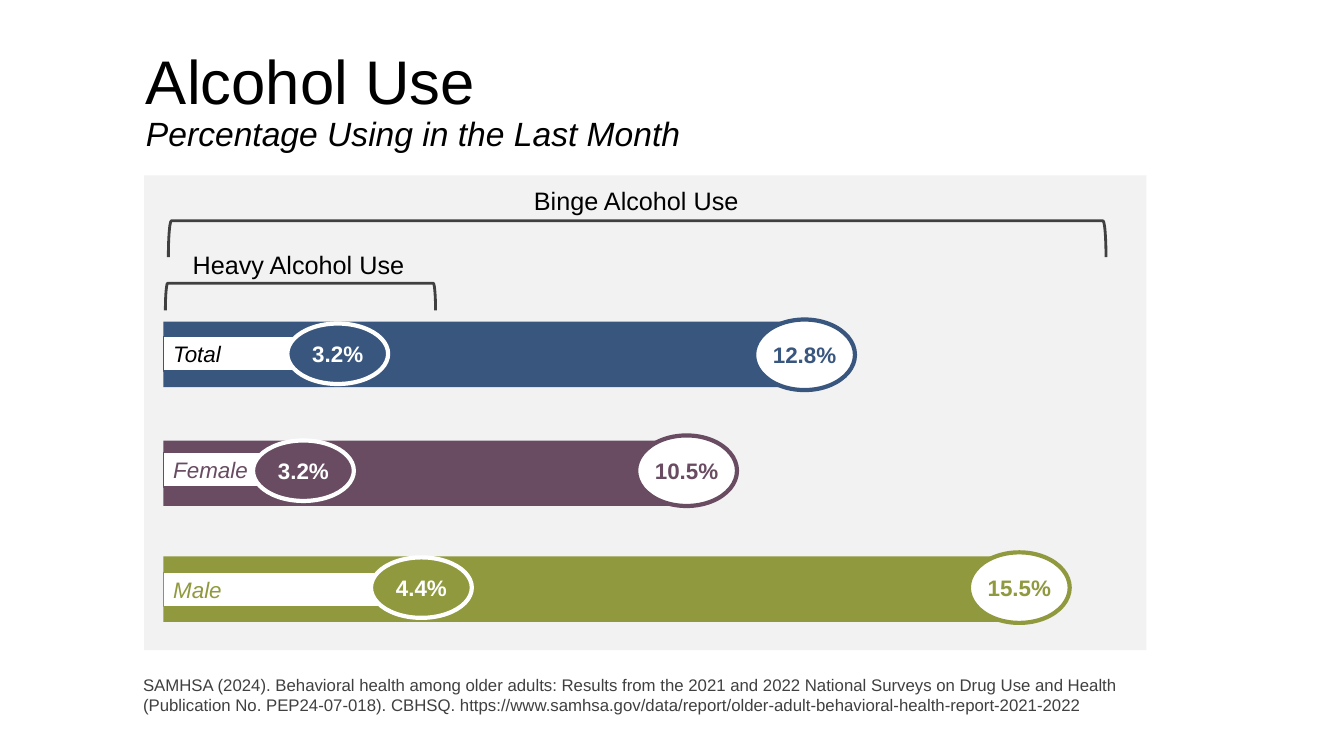
from pptx import Presentation
from pptx import util as u
from pptx.dml.color import RGBColor
from pptx.enum import shapes, text

COLORS = {
    "black": "000000", "white": "FFFFFF", "panel": "F2F2F2", "gray": "404040",
    "blue": "39567E", "plum": "694C62", "olive": "90993E",
}
FONT = "Arial"
LEFT = 1.62  # shared left edge of all bars

# name, color, label color, bar (top, width), label (top, width),
# heavy use (left, top, value), binge use (left, top, value)
GROUPS = [
    ("Total", "blue", "black", (3.19, 6.33), (3.34, 1.33),
     (2.85, 3.21, "3.2%"), (7.48, 3.17, "12.8%")),
    ("Female", "plum", "plum", (4.37, 5.2), (4.49, 1.33),
     (2.51, 4.37, "3.2%"), (6.31, 4.32, "10.5%")),
    ("Male", "olive", "olive", (5.52, 8.31), (5.68, 2.23),
     (3.68, 5.53, "4.4%"), (9.61, 5.48, "15.5%")),
]


def rgb(name):
    return RGBColor.from_string(COLORS[name])


def add_run(paragraph, words, size, color, bold=False, italic=False):
    run = paragraph.add_run()
    run.text = words
    font = run.font
    font.name, font.size = FONT, u.Pt(size)
    font.bold, font.italic = bold, italic
    font.color.rgb = rgb(color)


def add_shape(slide, kind, box, fill=None, line=None, weight=1):
    shape = slide.shapes.add_shape(kind, *map(u.Inches, box))
    shape.shadow.inherit = False
    if fill:
        shape.fill.solid()
        shape.fill.fore_color.rgb = rgb(fill)
    else:
        shape.fill.background()
    if line:
        shape.line.color.rgb = rgb(line)
        shape.line.width = u.Pt(weight)
    else:
        shape.line.fill.background()
    return shape


def add_text_box(slide, box, align=text.PP_ALIGN.LEFT, anchor=text.MSO_ANCHOR.TOP):
    frame = slide.shapes.add_textbox(*map(u.Inches, box)).text_frame
    frame.word_wrap = True
    frame.vertical_anchor = anchor
    paragraph = frame.paragraphs[0]
    paragraph.alignment = align
    return paragraph


def add_bar_label(slide, name, box, line, color):
    shape = add_shape(slide, shapes.MSO_SHAPE.RECTANGLE, box, "white", line)
    shape.text_frame.vertical_anchor = text.MSO_ANCHOR.MIDDLE
    paragraph = shape.text_frame.paragraphs[0]
    paragraph.alignment = text.PP_ALIGN.LEFT
    add_run(paragraph, name, 16, color, italic=True)


def add_value_oval(slide, left, top, height, value, fill, accent):
    shape = add_shape(slide, shapes.MSO_SHAPE.OVAL, (left, top, 1, height),
                      fill, accent, 3)
    frame = shape.text_frame
    frame.margin_left = frame.margin_right = 0
    frame.vertical_anchor = text.MSO_ANCHOR.MIDDLE
    paragraph = frame.paragraphs[0]
    paragraph.alignment = text.PP_ALIGN.CENTER
    add_run(paragraph, value, 16, accent, bold=True)


def add_bracket(slide, left, top, width, height):
    """Draw a bracket that opens downward over the given area."""
    box = (left + (width - height) / 2, top + (height - width) / 2, height, width)
    shape = add_shape(slide, shapes.MSO_SHAPE.RIGHT_BRACKET, box,
                      line="gray", weight=2)
    shape.rotation = 270


def add_bracket_label(slide, words, box):
    paragraph = add_text_box(slide, box, text.PP_ALIGN.CENTER)
    add_run(paragraph, words, 18, "black")


def main():
    presentation = Presentation()
    presentation.slide_width = u.Inches(13.33)
    presentation.slide_height = u.Inches(7.5)
    slide = presentation.slides.add_slide(presentation.slide_layouts[6])

    # Panel behind the bars
    add_shape(slide, shapes.MSO_SHAPE.RECTANGLE, (1.43, 1.74, 9.94, 4.71), "panel")

    # Title and subtitle
    title = add_text_box(slide, (1.35, 0.29, 11.03, 1.45),
                         anchor=text.MSO_ANCHOR.MIDDLE)
    title.line_spacing = 0.9
    add_run(title, "Alcohol Use", 44, "black")
    title.add_line_break()
    add_run(title, "Percentage Using in the Last Month", 24, "black", italic=True)

    # Reference
    reference = add_text_box(slide, (1.32, 6.64, 10.05, 0.5))
    add_run(reference, "SAMHSA (2024). Behavioral health among older adults: "
            "Results from the 2021 and 2022 National Surveys on Drug Use and Health "
            "(Publication No. PEP24-07-018). CBHSQ. https://www.samhsa.gov/data/"
            "report/older-adult-behavioral-health-report-2021-2022", 12, "gray")

    # One bar per group, with its label and two values
    for name, color, label_color, bar, label, heavy, binge in GROUPS:
        add_shape(slide, shapes.MSO_SHAPE.RECTANGLE,
                  (LEFT, bar[0], bar[1], 0.65), color)
        left, top, value = binge
        add_value_oval(slide, left, top, 0.7, value, "white", color)
        add_bar_label(slide, name, (LEFT, label[0], label[1], 0.34),
                      color, label_color)
        left, top, value = heavy
        add_value_oval(slide, left, top, 0.6, value, color, "white")

    # Brackets naming the two kinds of use
    add_bracket(slide, 1.64, 2.81, 2.68, 0.27)
    add_bracket_label(slide, "Heavy Alcohol Use", (1.62, 2.42, 2.68, 0.4))
    add_bracket(slide, 1.67, 2.19, 9.3, 0.36)
    add_bracket_label(slide, "Binge Alcohol Use", (1.65, 1.79, 9.32, 0.4))

    presentation.save("out.pptx")


if __name__ == "__main__":
    main()
